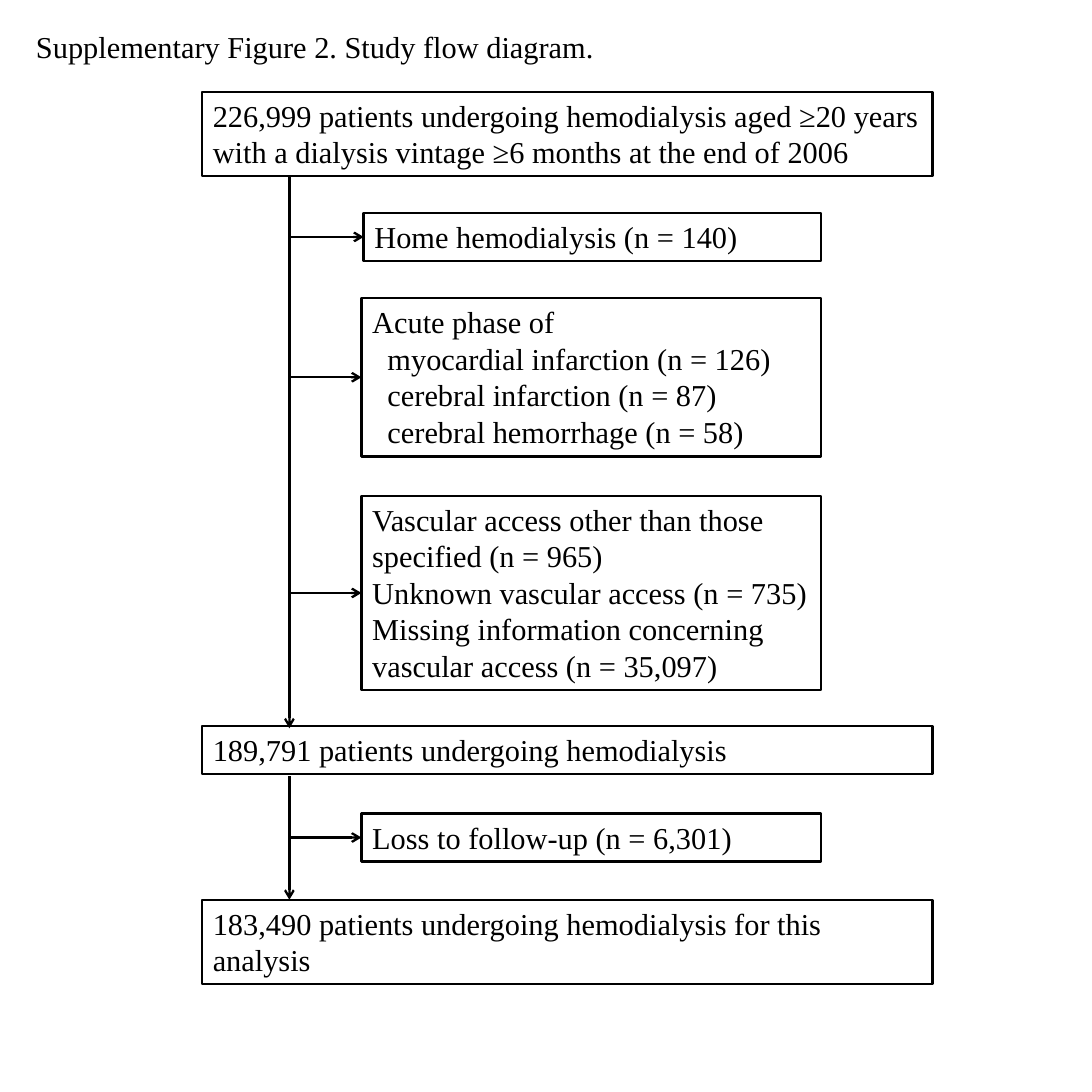
from lxml import etree
from pptx import Presentation
from pptx.dml.color import RGBColor
from pptx.enum.shapes import MSO_CONNECTOR, MSO_SHAPE
from pptx.enum.text import MSO_ANCHOR, PP_ALIGN
from pptx.oxml.ns import qn
from pptx.util import Inches, Pt

BLACK = "000000"
TRUNK_X = 2.65


def color(hex_value):
    return RGBColor.from_string(hex_value)


def add_arrow(x1, y1, x2, y2):
    arrow = slide.shapes.add_connector(
        MSO_CONNECTOR.STRAIGHT, Inches(x1), Inches(y1), Inches(x2), Inches(y2))
    arrow.line.color.rgb = color(BLACK)
    arrow.line.width = Pt(1.5)
    etree.SubElement(arrow.line._get_or_add_ln(), qn("a:tailEnd"), type="arrow")
    etree.SubElement(arrow._element.spPr, qn("a:effectLst"))
    return arrow


prs = Presentation()
prs.slide_width = prs.slide_height = Inches(10)
slide = prs.slides.add_slide(prs.slide_layouts[6])

title = slide.shapes.add_textbox(Inches(0.2), Inches(0.19), Inches(5.43), Inches(0.47))
title.text_frame.margin_left = title.text_frame.margin_right = Inches(0.13)
title.text_frame.margin_top = title.text_frame.margin_bottom = Inches(0.07)
title.text_frame.word_wrap = True
title.text_frame.text = "Supplementary Figure 2. Study flow diagram."
title_font = title.text_frame.paragraphs[0].runs[0].font
title_font.name = "Times New Roman"
title_font.size = Pt(20)
title_font.color.rgb = color(BLACK)

add_arrow(TRUNK_X, 1.61, TRUNK_X, 6.67)
add_arrow(TRUNK_X, 7.11, TRUNK_X, 8.24)

cohorts = [
    (1.85, 0.84, 6.69, 0.77, ["226,999 patients undergoing hemodialysis aged ≥20 years",
                              "with a dialysis vintage ≥6 months at the end of 2006"]),
    (1.85, 6.65, 6.69, 0.44, ["189,791 patients undergoing hemodialysis"]),
    (1.85, 8.24, 6.69, 0.77, ["183,490 patients undergoing hemodialysis for this analysis"]),
]
exclusions = [
    (3.33, 1.95, 4.19, 0.44, ["Home hemodialysis (n = 140)"]),
    (3.31, 2.73, 4.21, 1.45, ["Acute phase of",
                              "myocardial infarction (n = 126)",
                              "cerebral infarction (n = 87)",
                              "cerebral hemorrhage (n = 58)"]),
    (3.31, 4.54, 4.21, 1.78, ["Vascular access other than those specified (n = 965)",
                              "Unknown vascular access (n = 735)",
                              "Missing information concerning vascular access (n = 35,097)"]),
    (3.31, 7.45, 4.21, 0.44, ["Loss to follow-up (n = 6,301)"]),
]

for left, top, width, height, lines in cohorts + exclusions:
    box = slide.shapes.add_shape(
        MSO_SHAPE.RECTANGLE, Inches(left), Inches(top), Inches(width), Inches(height))
    box.shadow.inherit = False
    box.fill.background()
    box.line.color.rgb = color(BLACK)
    box.line.width = Pt(1.5)
    frame = box.text_frame
    frame.word_wrap = True
    frame.vertical_anchor = MSO_ANCHOR.TOP
    frame.text = "\n".join(lines)
    for paragraph in frame.paragraphs:
        paragraph.alignment = PP_ALIGN.LEFT
        if lines[0] == "Acute phase of" and paragraph.text != lines[0]:
            paragraph._p.get_or_add_pPr().set("marL", str(Inches(0.14)))
        for run in paragraph.runs:
            run.font.name = "Times New Roman"
            run.font.size = Pt(20)
            run.font.color.rgb = color(BLACK)
    if left > TRUNK_X:
        middle = top + height / 2
        branch = add_arrow(TRUNK_X, middle, left, middle)
        branch.end_connect(box, 1)

prs.save("out.pptx")
